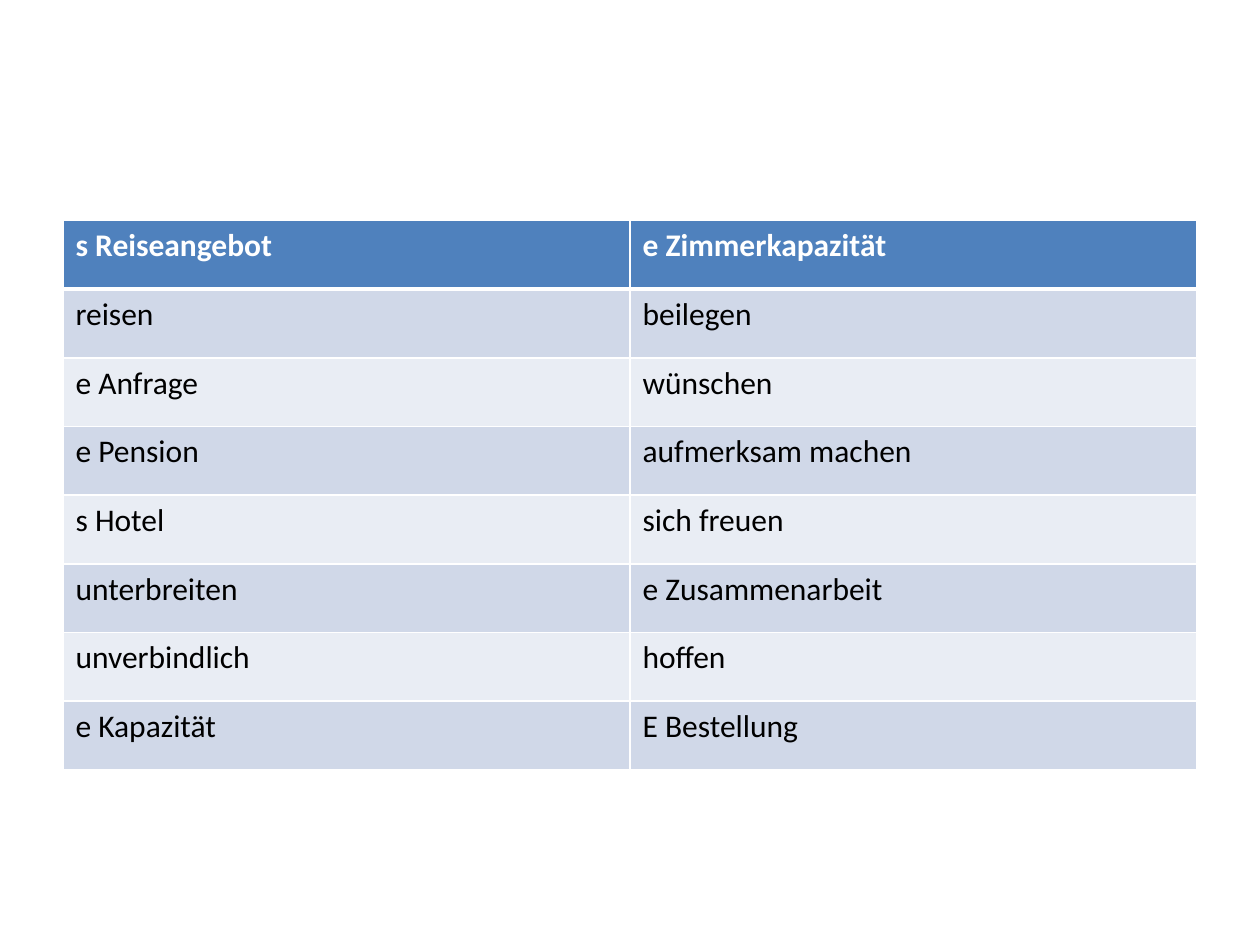
from lxml.etree import SubElement
from pptx import Presentation
from pptx.dml.color import RGBColor
from pptx.oxml.ns import qn
from pptx.util import Inches, Pt

WHITE = RGBColor(0xFF, 0xFF, 0xFF)
BLACK = RGBColor(0x00, 0x00, 0x00)
HEADER_BLUE = RGBColor(0x4F, 0x81, 0xBD)
BANDS = (RGBColor(0xD0, 0xD8, 0xE8), RGBColor(0xE9, 0xED, 0xF4))

VOCABULARY = [
    ("s Reiseangebot", "e Zimmerkapazität"),
    ("reisen", "beilegen"),
    ("e Anfrage", "wünschen"),
    ("e Pension", "aufmerksam machen"),
    ("s Hotel", "sich freuen"),
    ("unterbreiten", "e Zusammenarbeit"),
    ("unverbindlich", "hoffen"),
    ("e Kapazität", "E Bestellung"),
]


class SlideBuilder:
    font_name = "Calibri"
    font_size = Pt(18)
    thin = Pt(1)
    thick = Pt(3)

    def __init__(self, slide):
        self.slide = slide

    def table(self, entries, left, top, width, height):
        grid = self.slide.shapes.add_table(
            len(entries), len(entries[0]), left, top, width, height
        ).table
        for row, words in enumerate(entries):
            for column, word in enumerate(words):
                self.cell(grid.cell(row, column), word, row)

    def cell(self, cell, word, row):
        is_header = row == 0
        self.border(cell, "L", self.thin)
        self.border(cell, "R", self.thin)
        self.border(cell, "T", self.thick if row == 1 else self.thin)
        self.border(cell, "B", self.thick if is_header else self.thin)
        cell.fill.solid()
        cell.fill.fore_color.rgb = HEADER_BLUE if is_header else BANDS[(row - 1) % 2]
        cell.text = word
        font = cell.text_frame.paragraphs[0].font
        font.name = self.font_name
        font.size = self.font_size
        font.bold = is_header
        font.color.rgb = WHITE if is_header else BLACK

    def border(self, cell, side, weight):
        properties = cell._tc.get_or_add_tcPr()
        line = SubElement(properties, qn(f"a:ln{side}"), w=str(weight))
        fill = SubElement(line, qn("a:solidFill"))
        SubElement(fill, qn("a:srgbClr"), val=str(WHITE))


def main():
    deck = Presentation()
    deck.slide_width = Inches(10)
    deck.slide_height = Inches(7.5)
    builder = SlideBuilder(deck.slides.add_slide(deck.slide_layouts[6]))
    builder.table(VOCABULARY, Inches(0.5), Inches(1.75), Inches(9), Inches(4.36))
    deck.save("out.pptx")


if __name__ == "__main__":
    main()
